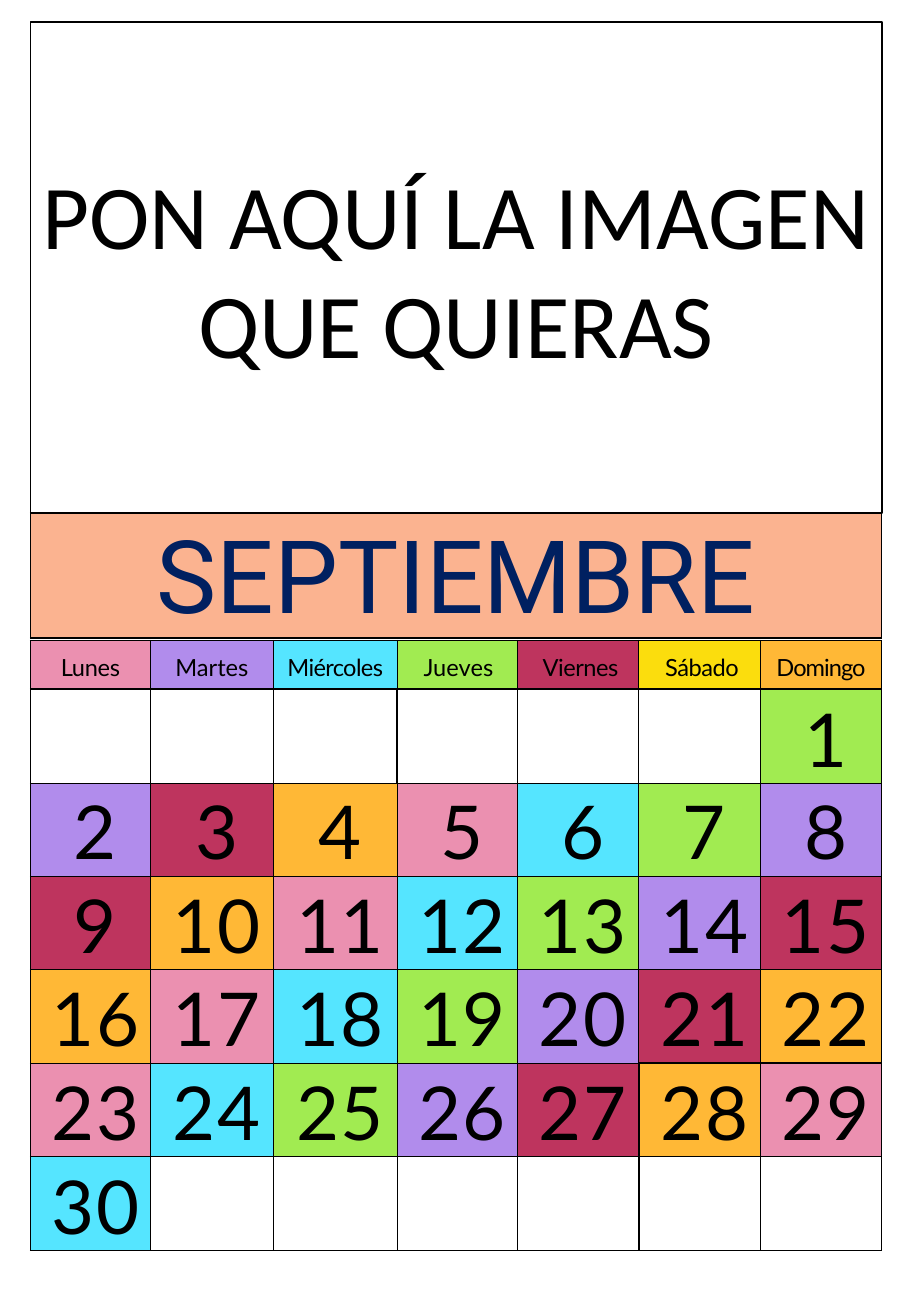
"""Build the September calendar page with room for an image above it."""
from lxml import etree
from pptx import Presentation
from pptx.dml.color import RGBColor
from pptx.enum.shapes import MSO_SHAPE
from pptx.enum.text import MSO_ANCHOR, PP_ALIGN
from pptx.oxml.ns import qn
from pptx.util import Inches, Pt

RECT = MSO_SHAPE.RECTANGLE
MIDDLE = MSO_ANCHOR.MIDDLE
CENTER = PP_ALIGN.CENTER

COLORS = {
    "black": "000000", "white": "FFFFFF", "navy": "002060", "peach": "FBB390",
    "pink": "EB90B0", "purple": "B18CEC", "cyan": "55E5FF", "green": "A1EB51",
    "crimson": "BE345E", "yellow": "FBDD0D", "orange": "FFB836",
}
LEFT, WIDTH = 0.25, 7.01
COL_WIDTHS = [0.99, 1.01, 1.02, 0.99, 1, 1, 1]
ROW_HEIGHTS = [0.4, 0.78, 0.76, 0.77, 0.77, 0.77, 0.77]
WEEKDAYS = [
    ("Lunes", "pink", -0.2, 0), ("Martes", "purple", 0, 0),
    ("Miércoles", "cyan", -0.4, 0), ("Jueves", "green", 0, 0.02),
    ("Viernes", "crimson", -0.3, 0.04), ("Sábado", "yellow", -0.3, 0.04),
    ("Domingo", "orange", -0.6, 0),
]
DAY_COLORS = ["green", "purple", "crimson", "orange", "pink", "cyan"]
DAYS, FIRST_COL = 30, 6
TOP_INSETS = [0.05, 0.04, 0.02, 0.03, 0.03, 0.03, 0.03]
THIN, THICK = 0.75, 1
THICK_CELLS = {(1, 0), (1, 1), (1, 2), (5, 5), (5, 6), (6, 5), (6, 6)}
SIDES = {"L": (0, -1), "R": (0, 1), "T": (-1, 0), "B": (1, 0)}


def rgb(name):
    return RGBColor.from_string(COLORS[name])


def style_text(p, text, font, size, color="black", spacing=0):
    p.alignment = CENTER
    p.font.name, p.font.size = font, Pt(size)
    p.font.color.rgb = rgb(color)
    r = p.add_run()
    r.text = text
    if spacing:
        r._r.get_or_add_rPr().set("spc", str(round(spacing * 100)))


def set_borders(cell, widths):
    tcPr = cell._tc.get_or_add_tcPr()
    for side in SIDES:
        ln = etree.SubElement(tcPr, qn(f"a:ln{side}"), w=str(Pt(widths[side])))
        fill = etree.SubElement(ln, qn("a:solidFill"))
        etree.SubElement(fill, qn("a:srgbClr"), val=COLORS["black"])


def style_cell(cell, fill, widths):
    set_borders(cell, widths)
    cell.fill.solid()
    cell.fill.fore_color.rgb = rgb(fill)


def write_cell(cell, text, font, size, color="black", spacing=0,
               inset=0.05, indent=0, before=4.2):
    cell.vertical_anchor = MIDDLE
    cell.margin_left = cell.margin_right = cell.margin_bottom = 0
    cell.margin_top = Inches(inset)
    p = cell.text_frame.paragraphs[0]
    style_text(p, text, font, size, color, spacing)
    p.space_before = Pt(before)
    if indent:
        pPr = p._p.get_or_add_pPr()
        pPr.set("marL", str(Inches(indent)))
        pPr.set("indent", "0")


def add_grid(s, top, col_widths, row_heights):
    table = s.shapes.add_table(
        len(row_heights), len(col_widths), Inches(LEFT), Inches(top),
        Inches(WIDTH), Inches(sum(row_heights))).table
    table.first_row = table.horz_banding = False
    for col, width in zip(table.columns, col_widths):
        col.width = Inches(width)
    for row, height in zip(table.rows, row_heights):
        row.height = Inches(height)
    return table


def border_widths(row, col):
    return {side: THICK if {(row, col), (row + dr, col + dc)} & THICK_CELLS else THIN
            for side, (dr, dc) in SIDES.items()}


def add_image_box(s):
    sp = s.shapes.add_shape(RECT, Inches(LEFT), Inches(0.18), Inches(WIDTH), Inches(4.04))
    sp.shadow.inherit = False
    sp.fill.solid()
    sp.fill.fore_color.rgb = rgb("white")
    sp.line.color.rgb = rgb("black")
    sp.line.width = Pt(THICK)
    tf = sp.text_frame
    tf.word_wrap = True
    tf.vertical_anchor = MIDDLE
    style_text(tf.paragraphs[0], "PON AQUÍ LA IMAGEN QUE QUIERAS", "Calibri", 54)


def add_month(s):
    cell = add_grid(s, 4.22, [WIDTH], [1.03]).cell(0, 0)
    style_cell(cell, "peach", {**dict.fromkeys(SIDES, THIN), "B": THICK})
    write_cell(cell, "SEPTIEMBRE", "Roboto", 60, "navy")


def add_calendar(s):
    table = add_grid(s, 5.27, COL_WIDTHS, ROW_HEIGHTS)
    for col, (name, fill, spacing, indent) in enumerate(WEEKDAYS):
        cell = table.cell(0, col)
        style_cell(cell, fill, border_widths(0, col))
        write_cell(cell, name, "Lato", 14, spacing=spacing, indent=indent)
    for row in range(1, len(ROW_HEIGHTS)):
        for col in range(len(COL_WIDTHS)):
            cell = table.cell(row, col)
            day = (row - 1) * len(COL_WIDTHS) + col - FIRST_COL + 1
            in_month = 1 <= day <= DAYS
            fill = DAY_COLORS[(day - 1) % len(DAY_COLORS)] if in_month else "white"
            style_cell(cell, fill, border_widths(row, col))
            if in_month:
                write_cell(cell, str(day), "Lato", 44, spacing=1,
                           inset=TOP_INSETS[row], indent=0.08, before=4.8)


def main():
    prs = Presentation()
    prs.slide_width, prs.slide_height = Inches(7.5), Inches(10.83)
    s = prs.slides.add_slide(prs.slide_layouts[6])
    add_month(s)
    add_calendar(s)
    add_image_box(s)
    prs.save("out.pptx")


if __name__ == "__main__":
    main()
